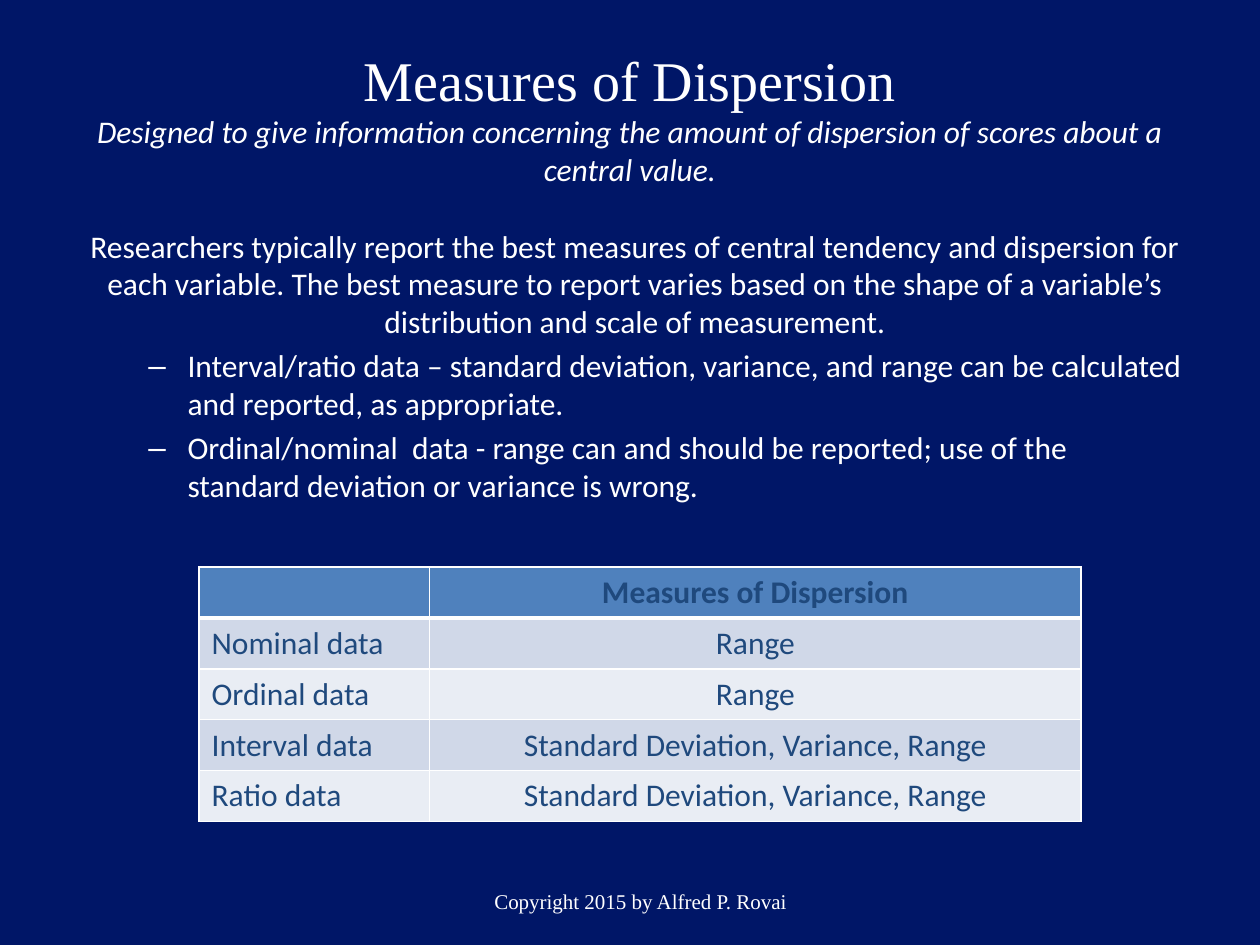
import pptx
import pptx.dml.color
import pptx.enum.text
import pptx.oxml
import pptx.oxml.ns
import pptx.util
from pptx.util import Inches

COLORS = {
    "background": "001667",
    "white": "FFFFFF",
    "header": "4F81BD",
    "odd_row": "D0D8E8",
    "even_row": "E9EDF4",
    "table_text": "1F497D",
}
SERIF = "Times New Roman"
SANS = "Calibri"
ALIGN = pptx.enum.text.PP_ALIGN
ANCHOR = pptx.enum.text.MSO_ANCHOR


def color(name):
    return pptx.dml.color.RGBColor.from_string(COLORS[name])


class SlideBuilder:
    """Holds the text style and the current slide."""

    def __init__(self, slide):
        self.slide = slide
        self.size = 18
        self.font = SANS
        fill = slide.background.fill
        fill.solid()
        fill.fore_color.rgb = color("background")

    def run(self, paragraph, text, size=None, font=None, fill="white", bold=False, italic=False):
        run = paragraph.add_run()
        run.text = text
        run.font.size = pptx.util.Pt(size or self.size)
        run.font.name = font or self.font
        run.font.color.rgb = color(fill)
        run.font.bold = bold
        run.font.italic = italic

    def text_box(self, left, top, width, height, anchor=ANCHOR.MIDDLE):
        box = self.slide.shapes.add_textbox(Inches(left), Inches(top), Inches(width), Inches(height))
        frame = box.text_frame
        frame.word_wrap = True
        frame.vertical_anchor = anchor
        frame.paragraphs[0].alignment = ALIGN.CENTER
        return frame

    def bullet(self, frame, text):
        paragraph = frame.add_paragraph()
        paragraph.level = 1
        paragraph.alignment = ALIGN.LEFT
        paragraph.space_before = pptx.util.Pt(3.6)
        properties = paragraph._p.get_or_add_pPr()
        properties.set("marL", str(Inches(0.81)))
        properties.set("indent", str(Inches(-0.31)))
        namespace = pptx.oxml.ns.nsdecls("a")
        properties.append(pptx.oxml.parse_xml(f'<a:buFont {namespace} typeface="Arial"/>'))
        properties.append(pptx.oxml.parse_xml(f'<a:buChar {namespace} char="–"/>'))
        self.run(paragraph, text)

    def cell_borders(self, cell, widths):
        properties = cell._tc.get_or_add_tcPr()
        for index, (side, points) in enumerate(widths.items()):
            line = pptx.oxml.parse_xml(
                f'<a:{side} {pptx.oxml.ns.nsdecls("a")} w="{pptx.util.Pt(points)}">'
                f'<a:solidFill><a:srgbClr val="{COLORS["white"]}"/></a:solidFill></a:{side}>'
            )
            properties.insert(index, line)

    def table(self, left, top, column_widths, height, rows):
        table = self.slide.shapes.add_table(
            len(rows), len(column_widths), Inches(left), Inches(top),
            Inches(sum(column_widths)), Inches(height),
        ).table
        for column, width in zip(table.columns, column_widths):
            column.width = Inches(width)
        for row_index, row in enumerate(rows):
            is_header = row_index == 0
            row_fill = "header" if is_header else "odd_row" if row_index % 2 else "even_row"
            widths = {
                "lnL": 1,
                "lnR": 1,
                "lnT": 3 if row_index == 1 else 1,
                "lnB": 3 if is_header else 1,
            }
            for column_index, text in enumerate(row):
                cell = table.cell(row_index, column_index)
                cell.fill.solid()
                cell.fill.fore_color.rgb = color(row_fill)
                self.cell_borders(cell, widths)
                paragraph = cell.text_frame.paragraphs[0]
                paragraph.alignment = ALIGN.CENTER if column_index else ALIGN.LEFT
                if text:
                    self.run(paragraph, text, fill="table_text", bold=is_header)


def main():
    presentation = pptx.Presentation()
    presentation.slide_width = Inches(10)
    presentation.slide_height = Inches(7.5)
    builder = SlideBuilder(presentation.slides.add_slide(presentation.slide_layouts[6]))

    # Title with its definition
    title = builder.text_box(0.5, 0.3, 9, 1.25).paragraphs[0]
    builder.run(title, "Measures of Dispersion", size=32, font=SERIF)
    title.add_line_break()
    builder.run(
        title,
        "Designed to give information concerning the amount of dispersion of scores about a central value.",
        italic=True,
    )

    # Reporting advice
    body = builder.text_box(0.58, 1.75, 8.92, 5.17, ANCHOR.TOP)
    builder.run(
        body.paragraphs[0],
        "Researchers typically report the best measures of central tendency and dispersion for each "
        "variable. The best measure to report varies based on the shape of a variable’s distribution "
        "and scale of measurement.",
    )
    builder.bullet(
        body,
        "Interval/ratio data – standard deviation, variance, and range can be calculated and "
        "reported, as appropriate.",
    )
    builder.bullet(
        body,
        "Ordinal/nominal  data - range can and should be reported; use of the standard deviation "
        "or variance is wrong.",
    )

    # Measures by scale of measurement
    all_measures = "Standard Deviation, Variance, Range"
    builder.table(1.58, 4.5, [1.83, 5.17], 2.02, [
        ("", "Measures of Dispersion"),
        ("Nominal data", "Range"),
        ("Ordinal data", "Range"),
        ("Interval data", all_measures),
        ("Ratio data", all_measures),
    ])

    # Footer
    footer = builder.text_box(1.75, 6.95, 6.67, 0.4).paragraphs[0]
    builder.run(footer, "Copyright 2015 by Alfred P. Rovai", size=12, font=SERIF)

    presentation.save("out.pptx")


if __name__ == "__main__":
    main()
